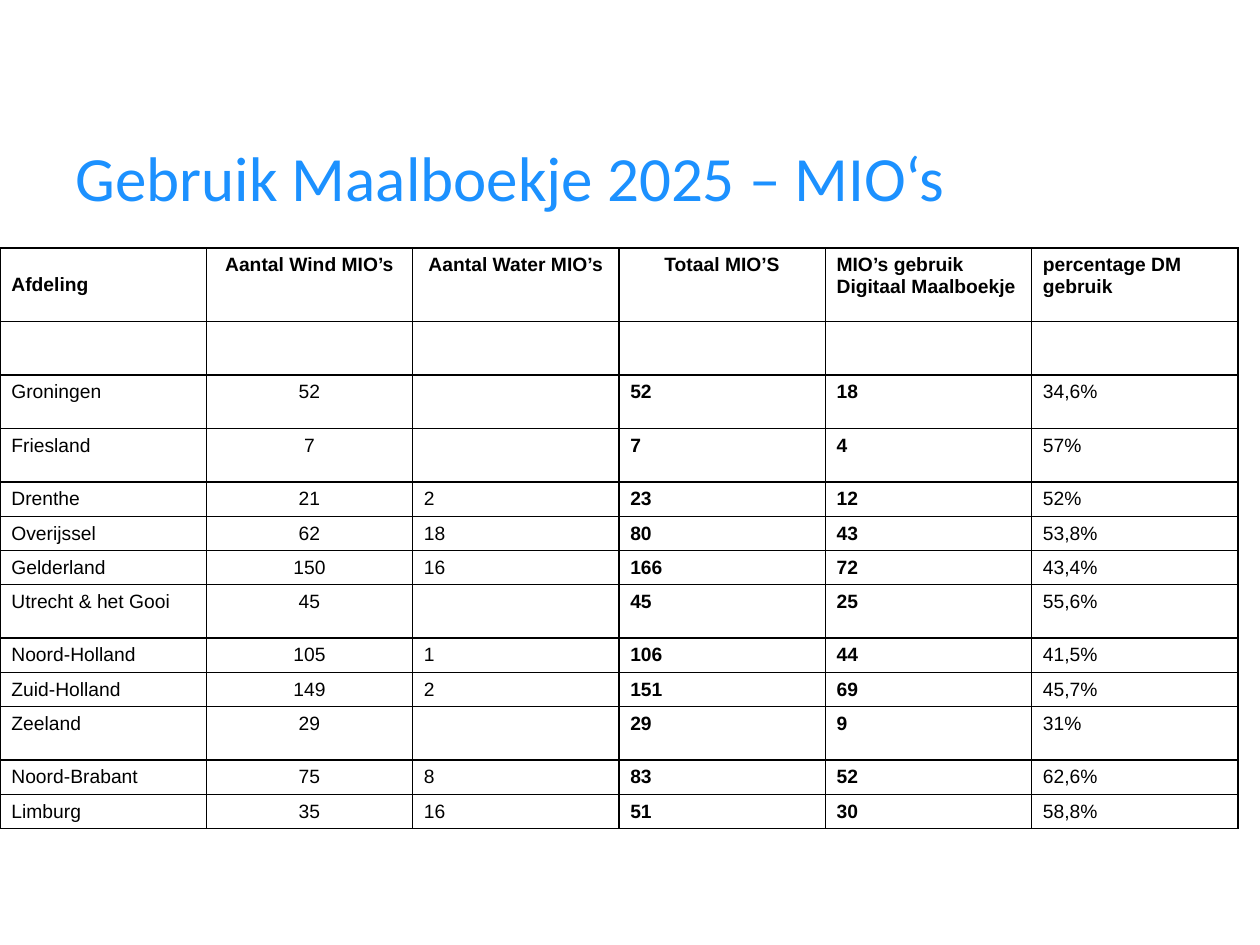
from lxml import etree
from pptx import Presentation
from pptx.dml.color import RGBColor
from pptx.enum.text import MSO_ANCHOR, PP_ALIGN
from pptx.oxml.ns import qn
from pptx.util import Pt

LEFT, CENTER = PP_ALIGN.LEFT, PP_ALIGN.CENTER
TOP, MIDDLE = MSO_ANCHOR.TOP, MSO_ANCHOR.MIDDLE
TITLE_ONLY = 5

BLACK, BLUE = "000000", "1C91FF"
COL_WIDTH = 117.9
HEADER_HEIGHT, TALL, SHORT = 42, 30.6, 19.55

HEADERS = ["Afdeling", "Aantal Wind MIO’s", "Aantal Water MIO’s", "Totaal MIO’S",
           "MIO’s gebruik Digitaal Maalboekje", "percentage DM gebruik"]
ROWS = [
    ("", "", "", "", "", ""),
    ("Groningen", "52", "", "52", "18", "34,6%"),
    ("Friesland", "7", "", "7", "4", "57%"),
    ("Drenthe", "21", "2", "23", "12", "52%"),
    ("Overijssel", "62", "18", "80", "43", "53,8%"),
    ("Gelderland", "150", "16", "166", "72", "43,4%"),
    ("Utrecht & het Gooi", "45", "", "45", "25", "55,6%"),
    ("Noord-Holland", "105", "1", "106", "44", "41,5%"),
    ("Zuid-Holland", "149", "2", "151", "69", "45,7%"),
    ("Zeeland", "29", "", "29", "9", "31%"),
    ("Noord-Brabant", "75", "8", "83", "52", "62,6%"),
    ("Limburg", "35", "16", "51", "30", "58,8%"),
]


def rgb(color):
    return RGBColor.from_string(color)


def format_paragraph(p, font, size, color, bold=False, align=LEFT):
    p.alignment = align
    p.font.name = font
    p.font.size = Pt(size)
    p.font.bold = bold
    p.font.color.rgb = rgb(color)


def add_title(s, text):
    sp = s.shapes.title
    sp.left, sp.top, sp.width, sp.height = Pt(36), Pt(74.2), Pt(648), Pt(67.7)
    tf = sp.text_frame
    tf.text = text
    tf.vertical_anchor = TOP
    tf.margin_top = Pt(5.2)
    format_paragraph(tf.paragraphs[0], "Calibri", 36, BLUE)


def set_borders(cell, color, width):
    tc_pr = cell._tc.get_or_add_tcPr()
    for i, side in enumerate(("a:lnL", "a:lnR", "a:lnT", "a:lnB")):
        ln = etree.Element(qn(side), w=str(Pt(width)))
        fill = etree.SubElement(ln, qn("a:solidFill"))
        etree.SubElement(fill, qn("a:srgbClr"), val=color)
        tc_pr.insert(i, ln)  # borders come before the fill


def fill_cell(cell, text, bold, align):
    cell.fill.background()
    set_borders(cell, BLACK, 1)
    cell.margin_left = cell.margin_right = Pt(6.5)
    cell.margin_top = cell.margin_bottom = Pt(3.6)
    if text:
        cell.text = text
        format_paragraph(cell.text_frame.paragraphs[0], "Arial", 11, BLACK, bold, align)


def add_usage_table(s):
    rows = [HEADERS, *ROWS]
    # Rows with an empty cell are taller
    heights = [HEADER_HEIGHT] + [SHORT if all(row) else TALL for row in ROWS]
    frame = s.shapes.add_table(len(rows), len(HEADERS), Pt(0), Pt(141.8),
                               Pt(COL_WIDTH * len(HEADERS)), Pt(sum(heights)))
    table = frame.table
    table.first_row = table.horz_banding = False
    for col in table.columns:
        col.width = Pt(COL_WIDTH)
    for r, (row, height) in enumerate(zip(rows, heights)):
        table.rows[r].height = Pt(height)
        for c, text in enumerate(row):
            header = r == 0
            centred = c == 1 or (header and c in (2, 3))
            fill_cell(table.cell(r, c), text, header or c in (3, 4),
                      CENTER if centred else LEFT)
    table.cell(0, 0).vertical_anchor = MIDDLE


def main():
    prs = Presentation()
    prs.slide_width, prs.slide_height = Pt(720), Pt(540)
    s = prs.slides.add_slide(prs.slide_layouts[TITLE_ONLY])
    add_title(s, "Gebruik Maalboekje 2025 – MIO‘s")
    add_usage_table(s)
    prs.save("out.pptx")


if __name__ == "__main__":
    main()
